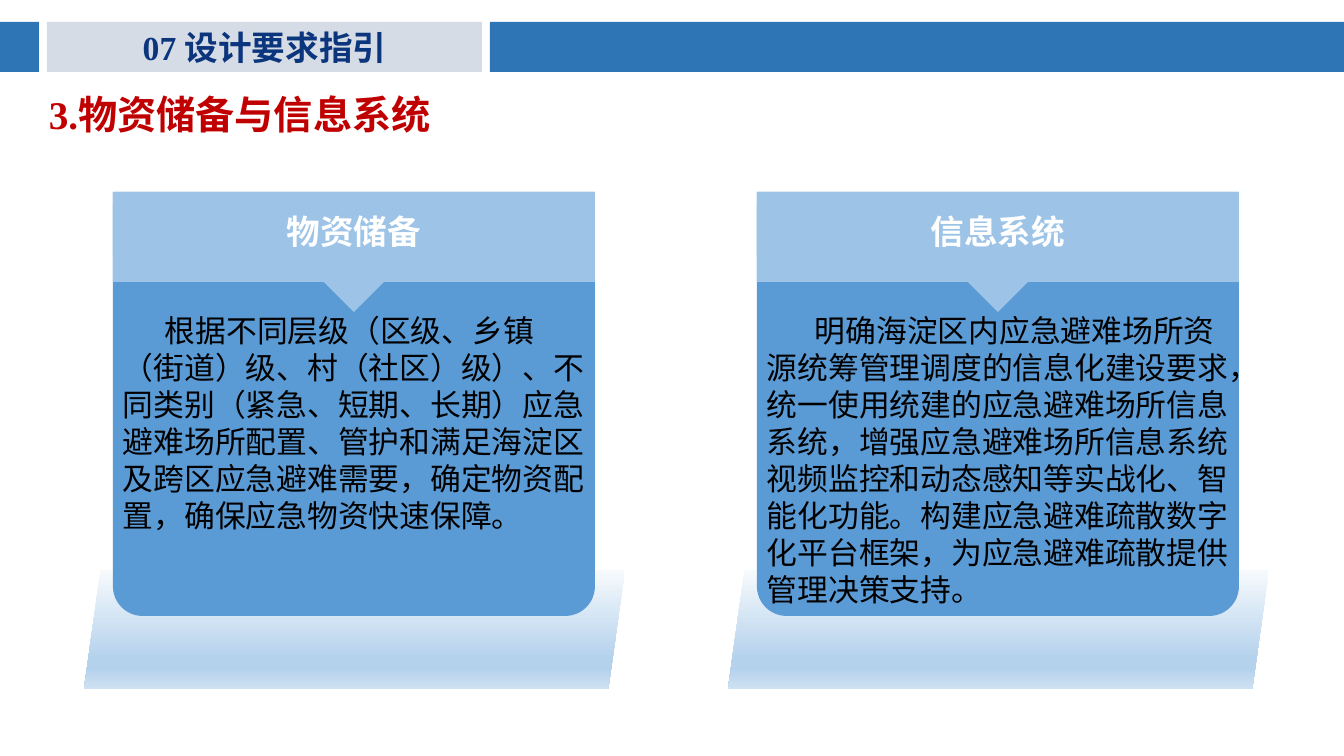
"""Build the slide on supply reserves and information systems."""
import pptx
import pptx.dml.color
import pptx.enum.shapes
import pptx.enum.text
import pptx.oxml
import pptx.oxml.ns
import pptx.util

SHAPE = pptx.enum.shapes.MSO_SHAPE
ALIGN = pptx.enum.text.PP_ALIGN
ANCHOR = pptx.enum.text.MSO_ANCHOR
PX = 12192000 / 1344


class Theme:
    font = "Times New Roman"
    bar, tab = "2E75B6", "D6DCE5"
    navy, red, white, black = "0B357C", "C00000", "FFFFFF", "000000"
    card, header = "5B9BD5", "9DC3E6"
    glow = [(0, "F7FAFD"), (74, "B5D2EC"), (83, "B5D2EC"), (100, "CEE1F2")]
    title, heading, body = 28, 24, 22


def add_block(shapes, kind, box, fill=None, adjustments=()):
    s = shapes.add_shape(kind, *[round(v * PX) for v in box])
    s.shadow.inherit = False
    s.line.fill.background()
    if fill:
        s.fill.solid()
        s.fill.fore_color.rgb = pptx.dml.color.RGBColor.from_string(fill)
    for i, value in enumerate(adjustments):
        s.adjustments[i] = value
    return s


def write(s, text, size, color, bold=True, align=ALIGN.CENTER, anchor=ANCHOR.MIDDLE, indent=0):
    tf = s.text_frame
    tf.word_wrap = True
    tf.vertical_anchor = anchor
    p = tf.paragraphs[0]
    p.text = text
    p.alignment = align
    if indent:
        p._p.get_or_add_pPr().set("indent", str(round(indent * PX)))
    p.font.name = Theme.font
    p.font.size = pptx.util.Pt(size)
    p.font.bold = bold
    p.font.color.rgb = pptx.dml.color.RGBColor.from_string(color)
    return p


prs = pptx.Presentation()
prs.slide_width = round(1344 * PX)
prs.slide_height = round(756 * PX)
slide = prs.slides.add_slide(prs.slide_layouts[6])

tab = add_block(slide.shapes, SHAPE.RECTANGLE, (47, 22, 435, 50), Theme.tab)
write(tab, "07 设计要求指引", Theme.heading, Theme.navy)
for left, width in [(0, 39), (490, 854)]:
    add_block(slide.shapes, SHAPE.RECTANGLE, (left, 22, width, 50), Theme.bar)

title = slide.shapes.add_textbox(*[round(v * PX) for v in (0, 93, 1042, 49)])
p = write(title, "3.物资储备与信息系统", Theme.title, Theme.red,
          align=ALIGN.JUSTIFY, anchor=ANCHOR.TOP, indent=39)
p.line_spacing = pptx.util.Pt(28)

cards = [
    ("物资储备", 42, 234,
     "根据不同层级（区级、乡镇（街道）级、村（社区）级）、不同类别（紧急、短期、长期）应急避难场所配置、"
     "管护和满足海淀区及跨区应急避难需要，确定物资配置，确保应急物资快速保障。"),
    ("信息系统", 48, 308,
     "明确海淀区内应急避难场所资源统筹管理调度的信息化建设要求，统一使用统建的应急避难场所信息系统，"
     "增强应急避难场所信息系统视频监控和动态感知等实战化、智能化功能。"
     "构建应急避难疏散数字化平台框架，为应急避难疏散提供管理决策支持。"),
]
for i, (heading, indent, height, body) in enumerate(cards):
    left = 113 + 644 * i
    base = add_block(slide.shapes, SHAPE.PARALLELOGRAM, (left - 29, 570, 541, 119),
                     adjustments=[0.14])
    base.fill.gradient()
    base.fill.gradient_angle = 270
    stops = base._element.spPr.find(".//" + pptx.oxml.ns.qn("a:gsLst"))
    for stop in list(stops):
        stops.remove(stop)
    for position, color in Theme.glow:
        stops.append(pptx.oxml.parse_xml(
            f'<a:gs {pptx.oxml.ns.nsdecls("a")} pos="{position * 1000}">'
            f'<a:srgbClr val="{color}"/></a:gs>'))

    group = slide.shapes.add_group_shape()
    add_block(group.shapes, SHAPE.ROUND_2_SAME_RECTANGLE, (left, 192, 482, 424),
              Theme.card, [0, 0.07])
    add_block(group.shapes, SHAPE.DOWN_ARROW_CALLOUT, (left, 192, 482, 120),
              Theme.header, [0.5, 0.25, 0.25, 0.75])
    s = add_block(group.shapes, SHAPE.RECTANGLE, (left, 206, 482, 50), Theme.header)
    write(s, heading, Theme.heading, Theme.white)

    s = slide.shapes.add_textbox(*[round(v * PX) for v in (left, 307, 482, height)])
    write(s, body, Theme.body, Theme.black, bold=False,
          align=ALIGN.LEFT, anchor=ANCHOR.TOP, indent=indent)

prs.save("out.pptx")
